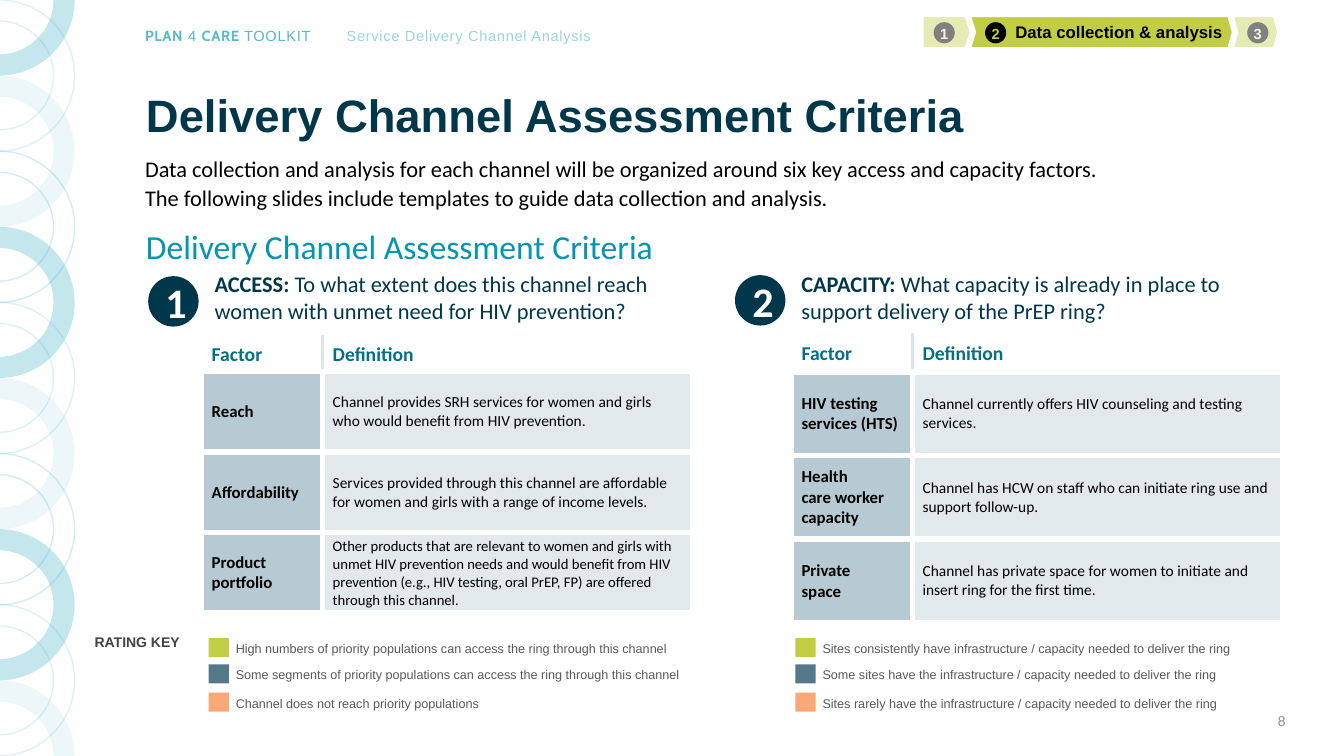
import math
from dataclasses import dataclass

import pptx
import pptx.dml.color
import pptx.enum.shapes
import pptx.enum.text
import pptx.oxml
import pptx.oxml.ns
import pptx.util

Inches, Pt = pptx.util.Inches, pptx.util.Pt
KIND = pptx.enum.shapes.MSO_SHAPE
ALIGN = pptx.enum.text.PP_ALIGN
ANCHOR = pptx.enum.text.MSO_ANCHOR
XMLNS = pptx.oxml.ns.nsdecls("a")


@dataclass(frozen=True)
class Theme:
    sans: str = "Arial"
    body: str = "Calibri"
    brand: str = "Cabin"
    white: str = "FFFFFF"
    black: str = "000000"
    navy: str = "00374B"
    teal: str = "0495B0"
    deep_teal: str = "037084"
    aqua: str = "56B9CC"
    pale_aqua: str = "9AD5E0"
    lime: str = "C2CD46"
    pale_lime: str = "F3F5DA"
    slate: str = "537887"
    peach: str = "F8A977"
    factor_fill: str = "B7CAD3"
    definition_fill: str = "E1E9EC"
    divider: str = "DBE5E9"
    badge_grey: str = "808080"
    key_grey: str = "434343"
    legend_grey: str = "595959"
    page_grey: str = "8C8C8C"
    title_size: float = 32.4
    badge_size: float = 30
    subtitle_size: float = 24
    lead_size: float = 16
    header_size: float = 14
    factor_size: float = 12
    definition_size: float = 11
    small_size: float = 10.5
    key_size: float = 10
    legend_size: float = 9


T = Theme()
SLIDE_W, SLIDE_H = 13.33, 7.5

TITLE = "Delivery Channel Assessment Criteria"
LEAD = ("Data collection and analysis for each channel will be organized around six key access "
        "and capacity factors. The following slides include templates to guide data collection "
        "and analysis.")
BRAND = [("PLAN", True), (" 4 ", False), ("CARE ", True), ("TOOLKIT", False)]

# number, left, width, badge left, tip, label, badge fill, digit colour, fill opacity
STEPS = [
    ("3", 12.18, 0.52, 12.37, 0.14, "", T.badge_grey, T.pale_lime, 40),
    ("2", 9.59, 2.66, 9.77, 0.14, "Data collection & analysis", T.black, T.lime, 100),
    ("1", 9.13, 0.52, 9.26, 0.16, "", T.badge_grey, T.pale_lime, 40),
]

PANELS = [
    dict(number="1", left=2.03, badge_top=2.74, table=(2.0, 3.35), rows=(0.32, 0.8),
         heading=("ACCESS: ", "To what extent does this channel reach women with unmet need "
                  "for HIV prevention?"),
         factors=[
             ("Reach", "Channel provides SRH services for women and girls who would benefit "
              "from HIV prevention.", T.definition_size),
             ("Affordability", "Services provided through this channel are affordable for women "
              "and girls with a range of income levels.", T.definition_size),
             ("Product\nportfolio", "Other products that are relevant to women and girls with "
              "unmet HIV prevention needs and would benefit from HIV prevention (e.g., HIV "
              "testing, oral PrEP, FP) are offered through this channel.", T.small_size)],
         legend=["High numbers of priority populations can access the ring through this channel",
                 "Some segments of priority populations can access the ring through this channel",
                 "Channel does not reach priority populations"]),
    dict(number="2", left=7.85, badge_top=2.73, table=(7.85, 3.33), rows=(0.36, 0.83),
         heading=("CAPACITY: ", "What capacity is already in place to support delivery of the "
                  "PrEP ring?"),
         factors=[
             ("HIV testing services (HTS)", "Channel currently offers HIV counseling and "
              "testing services.", T.definition_size),
             ("Health\ncare worker capacity", "Channel has HCW on staff who can initiate ring "
              "use and support follow-up.", T.definition_size),
             ("Private\nspace", "Channel has private space for women to initiate and insert "
              "ring for the first time.", T.definition_size)],
         legend=["Sites consistently have infrastructure / capacity needed to deliver the ring",
                 "Some sites have the infrastructure / capacity needed to deliver the ring",
                 "Sites rarely have the infrastructure / capacity needed to deliver the ring"]),
]
COLUMNS = (1.2, 3.67)
LEGEND_ROWS = [(6.33, T.lime), (6.59, T.slate), (6.87, T.peach)]

# Ring styles repeat down the left edge: (filled, opacity)
RING_CYCLE = [(True, 35), (False, 20), (True, 10), (False, 25)]
RING_COUNT, RING_OUTER, RING_INNER, RING_X = 11, 0.75, 0.54, -0.01


def rgb(code):
    return pptx.dml.color.RGBColor.from_string(code)


def paint(fill, color, opacity=100):
    fill.solid()
    fill.fore_color.rgb = rgb(color)
    if opacity < 100:
        for code in fill._xPr.iter(pptx.oxml.ns.qn("a:srgbClr")):
            if code.getparent().getparent() is fill._xPr:
                code.append(pptx.oxml.parse_xml(f'<a:alpha {XMLNS} val="{opacity * 1000}"/>'))


def add_span(para, words, size, color, font, bold=False, spacing=0):
    span = para.add_run()
    span.text = words
    span.font.size, span.font.name, span.font.bold = Pt(size), font, bold
    span.font.color.rgb = rgb(color)
    if spacing:
        span._r.get_or_add_rPr().set("spc", str(spacing))


def add_text(page, at, spans, align=ALIGN.LEFT, anchor=ANCHOR.TOP, line=1.0, top=0.05, wrap=True):
    """Text box holding one paragraph; spans are argument tuples for add_span."""
    frame = page.shapes.add_textbox(*map(Inches, at)).text_frame
    frame.word_wrap, frame.vertical_anchor, frame.margin_top = wrap, anchor, Inches(top)
    para = frame.paragraphs[0]
    para.alignment, para.line_spacing = align, line
    for span in spans:
        add_span(para, *span)


def add_block(page, kind, at, color, opacity=100):
    block = page.shapes.add_shape(kind, *map(Inches, at))
    block.shadow.inherit = False
    paint(block.fill, color, opacity)
    block.line.fill.background()
    return block


def add_label(block, span, align=ALIGN.CENTER, anchor=ANCHOR.MIDDLE, margin=None):
    frame = block.text_frame
    frame.vertical_anchor = anchor
    if margin is not None:
        frame.margin_left = frame.margin_right = frame.margin_top = frame.margin_bottom = margin
    frame.paragraphs[0].alignment = align
    add_span(frame.paragraphs[0], *span)


def add_ring(page, index):
    """Half ring on the left edge, bent from quarter arcs; the end ones keep one quarter."""
    angles = [-90, 0, 90][index == 0:3 - (index == RING_COUNT - 1)]
    center = index * SLIDE_H / (RING_COUNT - 1)
    corners = [(RING_OUTER, angle) for angle in angles]
    corners += [(RING_INNER, angle) for angle in reversed(angles)]
    points = [(Inches(RING_X + radius * math.cos(math.radians(angle))),
               Inches(center + radius * math.sin(math.radians(angle)))) for radius, angle in corners]
    builder = page.shapes.build_freeform(*points[0])
    builder.add_line_segments(points[1:], close=True)
    ring = builder.convert_to_shape()
    ring.shadow.inherit = False
    sides = list(ring._element.iter(pptx.oxml.ns.qn("a:lnTo")))
    for side, (radius, begin), (_, end) in zip(sides, corners, corners[1:]):
        if begin != end:
            side.getparent().replace(side, pptx.oxml.parse_xml(
                f'<a:arcTo {XMLNS} wR="{Inches(radius)}" hR="{Inches(radius)}" '
                f'stAng="{begin % 360 * 60000}" swAng="{(end - begin) * 60000}"/>'))
    filled, opacity = RING_CYCLE[index % len(RING_CYCLE)]
    if filled:
        paint(ring.fill, T.aqua, opacity)
        ring.line.fill.background()
    else:
        ring.fill.background()
        ring.line.width = Pt(1)
        paint(ring.line.fill, T.aqua, opacity)


def add_step(page, number, left, width, badge_left, tip, label, badge_fill, digit, opacity):
    arrow = add_block(page, KIND.PENTAGON, (left, 0.14, width, 0.36), T.lime, opacity)
    arrow.adjustments[0] = tip
    arrow.line.width = Pt(4.5)
    paint(arrow.line.fill, T.white)
    if label:
        add_label(arrow, (label, T.factor_size, T.black, T.sans, True), ALIGN.RIGHT)
    badge = add_block(page, KIND.OVAL, (badge_left, 0.22, 0.21, 0.21), badge_fill)
    add_label(badge, (number, T.small_size, digit, T.sans, True), anchor=ANCHOR.TOP, margin=0)


def fill_cell(cell, words, size, color, bold, fill, divider=None):
    """Write a cell with white borders; divider names the side drawn as the header rule."""
    cell.vertical_anchor = ANCHOR.MIDDLE
    paint(cell.fill, fill)
    frame = cell.text_frame
    for index, line in enumerate(words.split("\n")):
        para = frame.add_paragraph() if index else frame.paragraphs[0]
        add_span(para, line, size, color, T.body, bold)
    for index, side in enumerate("LRTB"):
        edge, width = (T.divider, 3) if side == divider else (T.white, 4.5)
        cell._tc.get_or_add_tcPr().insert(index, pptx.oxml.parse_xml(
            f'<a:ln{side} {XMLNS} w="{Pt(width)}"><a:solidFill>'
            f'<a:srgbClr val="{edge}"/></a:solidFill></a:ln{side}>'))


def add_panel(page, number, left, badge_top, table, rows, heading, factors, legend):
    add_text(page, (left, 2.63, 4.85, 0.7),
             [(words, T.lead_size, T.navy, T.body, bold) for words, bold in zip(heading, (True, False))])
    badge = add_block(page, KIND.OVAL, (left - 0.56, badge_top, 0.5, 0.5), T.navy)
    add_label(badge, (number, T.badge_size, T.white, T.body, True))

    head, pitch = rows
    size = (sum(COLUMNS), head + pitch * len(factors))
    grid = page.shapes.add_table(len(factors) + 1, 2, *map(Inches, table + size)).table
    for column, width in zip(grid.columns, COLUMNS):
        column.width = Inches(width)
    for index, row in enumerate(grid.rows):
        row.height = Inches(pitch if index else head)
    for column, (words, side) in enumerate([("Factor", "R"), ("Definition", "L")]):
        fill_cell(grid.cell(0, column), words, T.header_size, T.deep_teal, True, T.white, side)
    for row, (factor, definition, points) in enumerate(factors, 1):
        fill_cell(grid.cell(row, 0), factor, T.factor_size, T.black, True, T.factor_fill)
        fill_cell(grid.cell(row, 1), definition, points, T.black, False, T.definition_fill)

    for (top, color), words in zip(LEGEND_ROWS, legend):
        add_block(page, KIND.RECTANGLE, (left + 0.04, top, 0.2, 0.19), color)
        add_text(page, (left + 0.21, top + 0.03, 4.66, 0.19),
                 [(words, T.legend_size, T.legend_grey, T.sans)], top=0)


def main():
    deck = pptx.Presentation()
    deck.slide_width, deck.slide_height = Inches(SLIDE_W), Inches(SLIDE_H)
    page = deck.slides.add_slide(deck.slide_layouts[6])
    add_text(page, (1.34, 0.22, 1.84, 0.28),
             [(words, T.small_size, T.aqua, T.brand if bold else T.sans, bold, 50)
              for words, bold in BRAND], wrap=False)
    add_text(page, (3.34, 0.22, 2.73, 0.28),
             [("Service Delivery Channel Analysis", T.small_size, T.pale_aqua, T.sans, False, 50)])
    for index in range(RING_COUNT):
        add_ring(page, index)
    for step in STEPS:
        add_step(page, *step)
    for panel in PANELS:
        add_panel(page, **panel)
    add_text(page, (1.35, 0.89, 11.1, 0.56), [(TITLE, T.title_size, T.navy, T.sans, True)],
             anchor=ANCHOR.MIDDLE, line=0.9)
    add_text(page, (1.35, 2.15, 11.1, 0.52), [(TITLE, T.subtitle_size, T.teal, T.body)], line=1.1)
    add_text(page, (1.34, 1.46, 9.79, 0.75), [(LEAD, T.lead_size, T.black, T.body)], line=1.1)
    add_text(page, (0.84, 6.27, 1.29, 0.35), [("RATING KEY", T.key_size, T.key_grey, T.sans, True)],
             line=1.1, top=0)
    add_text(page, (9.85, 6.95, 3, 0.4), [("8", T.key_size, T.page_grey, T.sans)],
             align=ALIGN.RIGHT, anchor=ANCHOR.MIDDLE)
    deck.save("out.pptx")


if __name__ == "__main__":
    main()
